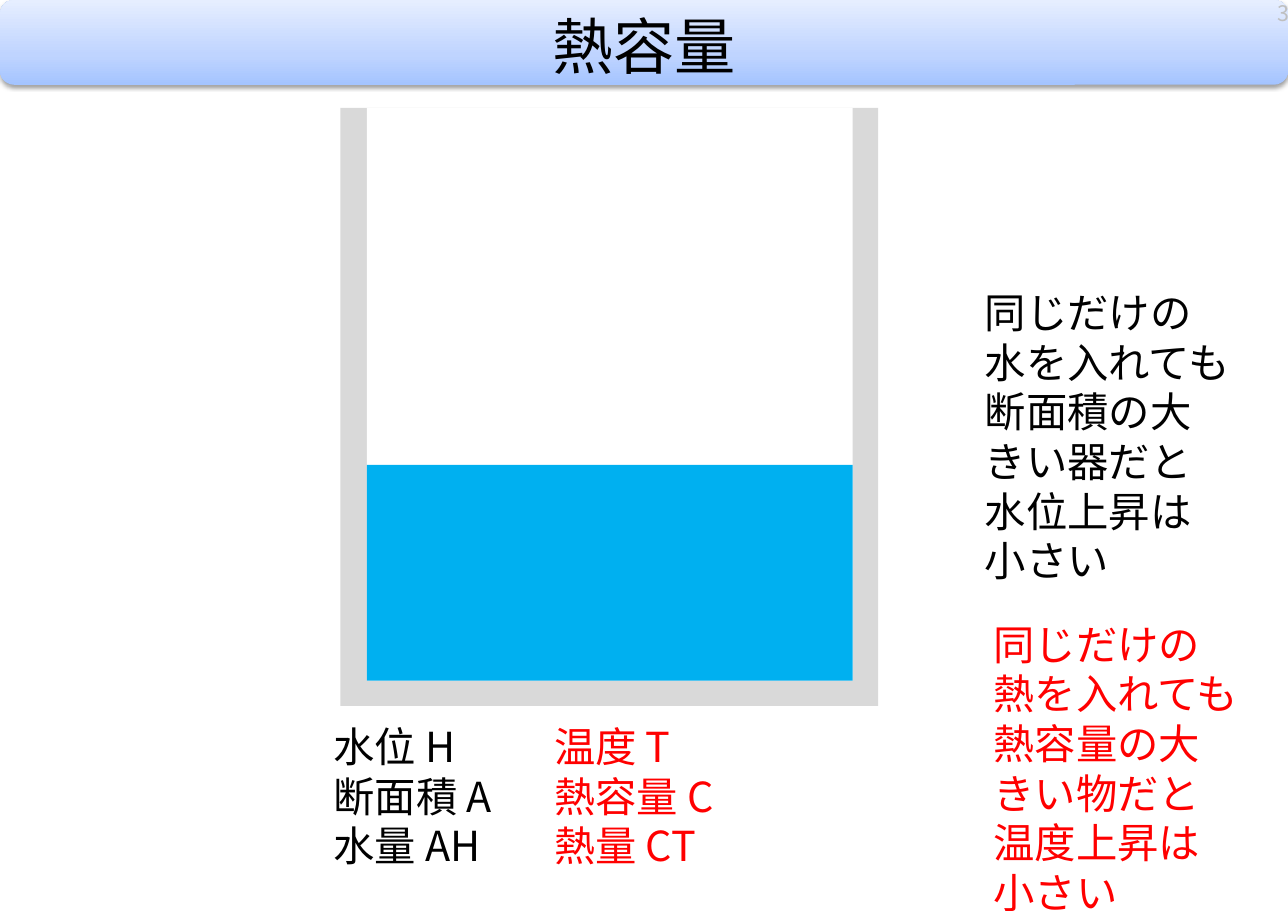
from lxml import etree
from pptx import Presentation
from pptx.dml.color import RGBColor
from pptx.enum.shapes import MSO_SHAPE
from pptx.enum.text import MSO_ANCHOR, PP_ALIGN
from pptx.oxml import parse_xml
from pptx.oxml.ns import nsdecls, qn
from pptx.util import Inches, Pt

RECTANGLE, ROUNDED = MSO_SHAPE.RECTANGLE, MSO_SHAPE.ROUNDED_RECTANGLE
TOP, MIDDLE = MSO_ANCHOR.TOP, MSO_ANCHOR.MIDDLE
LEFT, CENTER, RIGHT = PP_ALIGN.LEFT, PP_ALIGN.CENTER, PP_ALIGN.RIGHT
BLACK, RED, WHITE = "000000", "FF0000", "FFFFFF"
GLASS, WATER, NUMBER_GRAY = "D9D9D9", "00B0F0", "BFBFBF"
BANNER_STOPS = [(0, "A4C4FF"), (35, "BFD4FF"), (100, "E6EEFF")]


def color(code):
    return RGBColor.from_string(code)


class SlideBuilder:
    font_name = "Noto Sans CJK JP"
    body_size = 27

    def __init__(self, page):
        self.page = page

    def block(self, left, top, width, height, fill, kind=RECTANGLE):
        shape = self.page.shapes.add_shape(
            kind, Inches(left), Inches(top), Inches(width), Inches(height))
        shape.shadow.inherit = False
        shape.fill.solid()
        shape.fill.fore_color.rgb = color(fill)
        shape.line.fill.background()
        return shape

    def banner(self, left, top, width, height, stops):
        """Rounded bar with an upward gradient and a soft shadow below."""
        shape = self.block(left, top, width, height, WHITE, ROUNDED)
        stop_xml = "".join(
            f'<a:gs pos="{place * 1000}"><a:srgbClr val="{code}"/></a:gs>'
            for place, code in stops)
        gradient = parse_xml(
            f'<a:gradFill {nsdecls("a")} rotWithShape="1"><a:gsLst>{stop_xml}'
            '</a:gsLst><a:lin ang="16200000" scaled="0"/></a:gradFill>')
        properties = shape._element.spPr
        properties.replace(properties.find(qn("a:solidFill")), gradient)
        shadow = parse_xml(
            f'<a:outerShdw {nsdecls("a")} blurRad="{Pt(3.1)}" dist="{Pt(1.6)}" '
            'dir="5400000" rotWithShape="0"><a:srgbClr val="000000">'
            '<a:alpha val="38000"/></a:srgbClr></a:outerShdw>')
        properties.find(qn("a:effectLst")).append(shadow)

    def text(self, left, top, width, height, lines, size=body_size,
             align=LEFT, anchor=TOP, inset=True, wrap=True):
        """Each line is a list of (words, colour) spans."""
        box = self.page.shapes.add_textbox(
            Inches(left), Inches(top), Inches(width), Inches(height))
        frame = box.text_frame
        frame.word_wrap = wrap
        frame.vertical_anchor = anchor
        if not inset:
            frame.margin_left = frame.margin_right = 0
            frame.margin_top = frame.margin_bottom = 0
        for index, line in enumerate(lines):
            para = frame.add_paragraph() if index else frame.paragraphs[0]
            para.alignment = align
            para.font.size = Pt(size)
            para.font.name = self.font_name
            defaults = para._p.pPr.find(qn("a:defRPr"))
            etree.SubElement(defaults, qn("a:ea"), typeface=self.font_name)
            for words, code in line:
                span = para.add_run()
                span.text = words
                span.font.color.rgb = color(code)


def main():
    deck = Presentation()
    deck.slide_width, deck.slide_height = Inches(11.69), Inches(8.27)
    builder = SlideBuilder(deck.slides.add_slide(deck.slide_layouts[6]))

    # Title bar and page number
    builder.banner(0, 0, 11.69, 0.77, BANNER_STOPS)
    builder.text(0, 0.01, 11.69, 0.79, [[("熱容量", BLACK)]], size=40,
                 align=CENTER, anchor=MIDDLE, inset=False, wrap=False)
    builder.text(11.36, 0, 0.34, 0.24, [[("3", NUMBER_GRAY)]], size=14,
                 align=RIGHT, anchor=MIDDLE, inset=False)

    # Vessel: wall, hollow, water
    builder.block(3.09, 0.98, 4.88, 5.43, GLASS)
    builder.block(3.33, 0.98, 4.41, 5.2, WHITE)
    builder.block(3.33, 4.22, 4.41, 1.96, WATER)

    # Explanations for water and for heat
    builder.text(8.84, 2.56, 2.44, 2.37, [[
        ("同じだけの水を入れても断面積の大きい器だと水位上昇は小さい", BLACK)]])
    builder.text(8.92, 5.57, 2.44, 2.37, [[
        ("同じだけの熱を入れても熱容量の大きい物だと温度上昇は小さい", RED)]])

    # Matching quantities
    pairs = [("水位 H", "温度 T"), ("断面積 A", "熱容量 C"), ("水量 AH", "熱量 CT")]
    builder.text(2.93, 6.5, 5.51, 1.46, [
        [(water + "\t\t", BLACK), (heat, RED)] for water, heat in pairs])

    deck.save("out.pptx")


if __name__ == "__main__":
    main()
